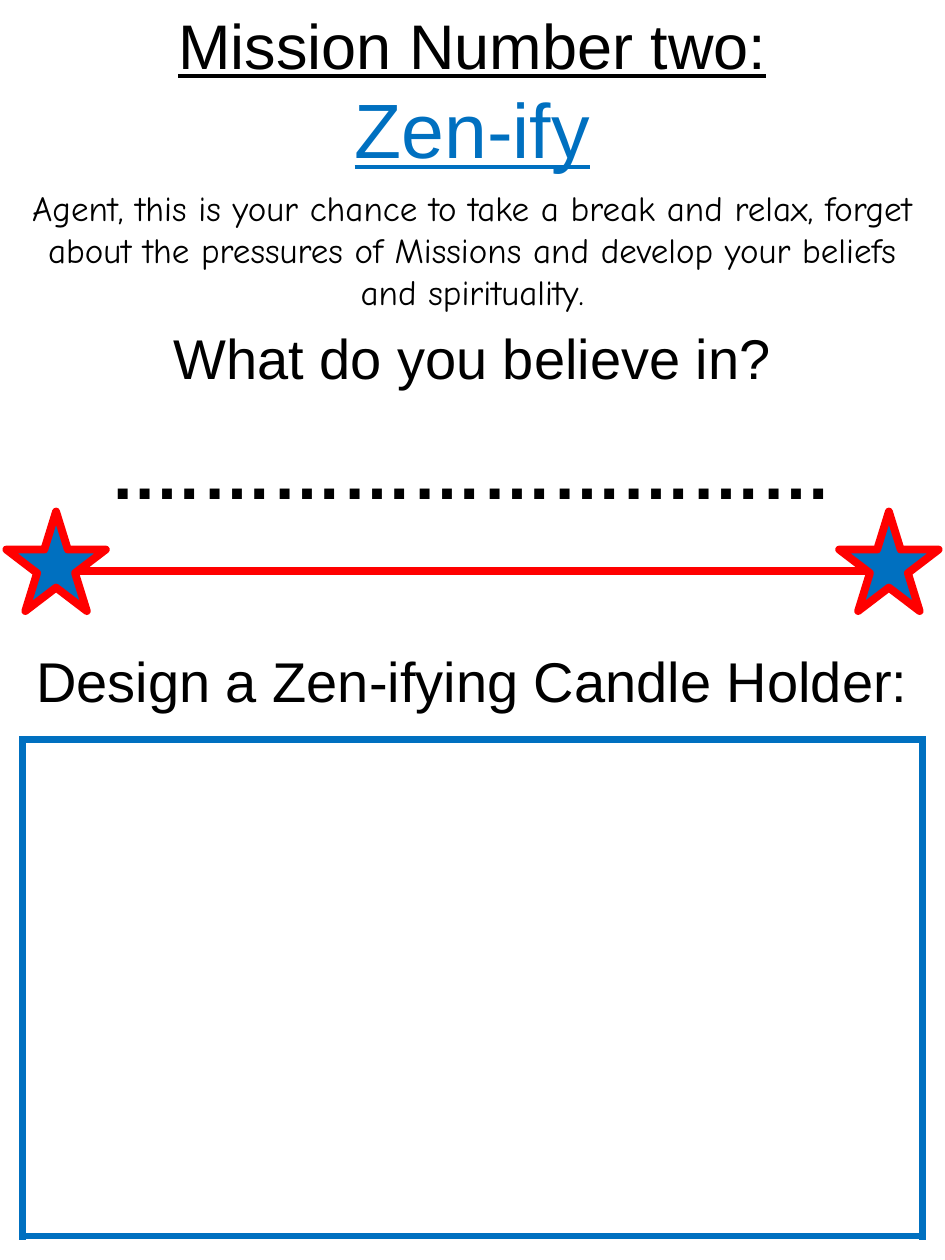
from lxml import etree
from pptx import Presentation
from pptx.dml.color import RGBColor
from pptx.enum.shapes import MSO_CONNECTOR, MSO_SHAPE
from pptx.enum.text import PP_ALIGN
from pptx.oxml.ns import qn
from pptx.util import Inches, Pt

CENTER = PP_ALIGN.CENTER
STAR = MSO_SHAPE.STAR_5_POINT
STRAIGHT = MSO_CONNECTOR.STRAIGHT

BLACK = "000000"
BLUE = "0070C0"
RED = "FF0000"


def color(value):
    return RGBColor.from_string(value)


class Worksheet:
    heading_font = "Arial"
    body_font = "Comic Neue"
    line_width = Pt(4.5)

    def __init__(self, slide):
        self.slide = slide

    def text_box(self, left, top, width, height):
        """Add an empty wrapping text box and return its text frame."""
        box = self.slide.shapes.add_textbox(
            Inches(left), Inches(top), Inches(width), Inches(height))
        box.text_frame.word_wrap = True
        return box.text_frame

    def set_text(self, paragraph, text, size, font=heading_font, fill=BLACK,
                 bold=False, underline=False):
        paragraph.text = text
        paragraph.alignment = CENTER
        paragraph.font.name = font
        paragraph.font.size = Pt(size)
        paragraph.font.bold = bold
        paragraph.font.underline = underline
        paragraph.font.color.rgb = color(fill)

    def outline(self, shape):
        shape.line.color.rgb = color(RED)
        shape.line.width = self.line_width

    def rule(self, left, right, y):
        connector = self.slide.shapes.add_connector(
            STRAIGHT, Inches(left), Inches(y), Inches(right), Inches(y))
        self.outline(connector)
        properties = connector._element.find(qn("p:spPr"))
        etree.SubElement(properties, qn("a:effectLst"))

    def star(self, left, top, size):
        shape = self.slide.shapes.add_shape(
            STAR, Inches(left), Inches(top), Inches(size), Inches(size))
        shape.shadow.inherit = False
        shape.fill.solid()
        shape.fill.fore_color.rgb = color(BLUE)
        self.outline(shape)

    def frame(self, left, top, width, height):
        """Add a one-cell table with a thick border as a drawing area."""
        table = self.slide.shapes.add_table(
            1, 1, Inches(left), Inches(top), Inches(width), Inches(height)).table
        table.first_row = False
        table.horz_banding = False
        cell = table.cell(0, 0)
        cell.fill.background()
        properties = cell._tc.get_or_add_tcPr()
        for index, side in enumerate(("a:lnL", "a:lnR", "a:lnT", "a:lnB")):
            border = etree.Element(qn(side), w=str(self.line_width))
            fill = etree.SubElement(border, qn("a:solidFill"))
            etree.SubElement(fill, qn("a:srgbClr"), val=BLUE)
            properties.insert(index, border)


def main():
    presentation = Presentation()
    presentation.slide_width = Inches(7.5)
    presentation.slide_height = Inches(10)
    slide = presentation.slides.add_slide(presentation.slide_layouts[6])
    sheet = Worksheet(slide)
    left, width = 0.08, 7.34

    title = sheet.text_box(0, 0, 7.5, 1.45)
    sheet.set_text(title.paragraphs[0], "Mission Number two:", 36, underline=True)
    sheet.set_text(title.add_paragraph(), "Zen-ify", 44, fill=BLUE, underline=True)

    briefing = sheet.text_box(left, 1.43, width, 1.11)
    sheet.set_text(
        briefing.paragraphs[0],
        "Agent, this is your chance to take a break and relax, forget about "
        "the pressures of Missions and develop your beliefs and spirituality.",
        20, font=sheet.body_font)

    question = sheet.text_box(left, 2.52, width, 1.62)
    sheet.set_text(question.paragraphs[0], "What do you believe in?", 32)
    answer = question.add_paragraph()
    sheet.set_text(answer, ".…………………………", 40, bold=True)
    answer.space_before = Pt(22)

    sheet.rule(0.52, 6.98, 4.53)
    for star_left in (0.05, 6.66):
        sheet.star(star_left, 4.06, 0.79)

    task = sheet.text_box(left, 5.08, width, 0.64)
    sheet.set_text(task.paragraphs[0], "Design a Zen-ifying Candle Holder:", 32)
    sheet.frame(0.18, 5.87, 7.14, 3.94)

    presentation.save("out.pptx")


if __name__ == "__main__":
    main()
